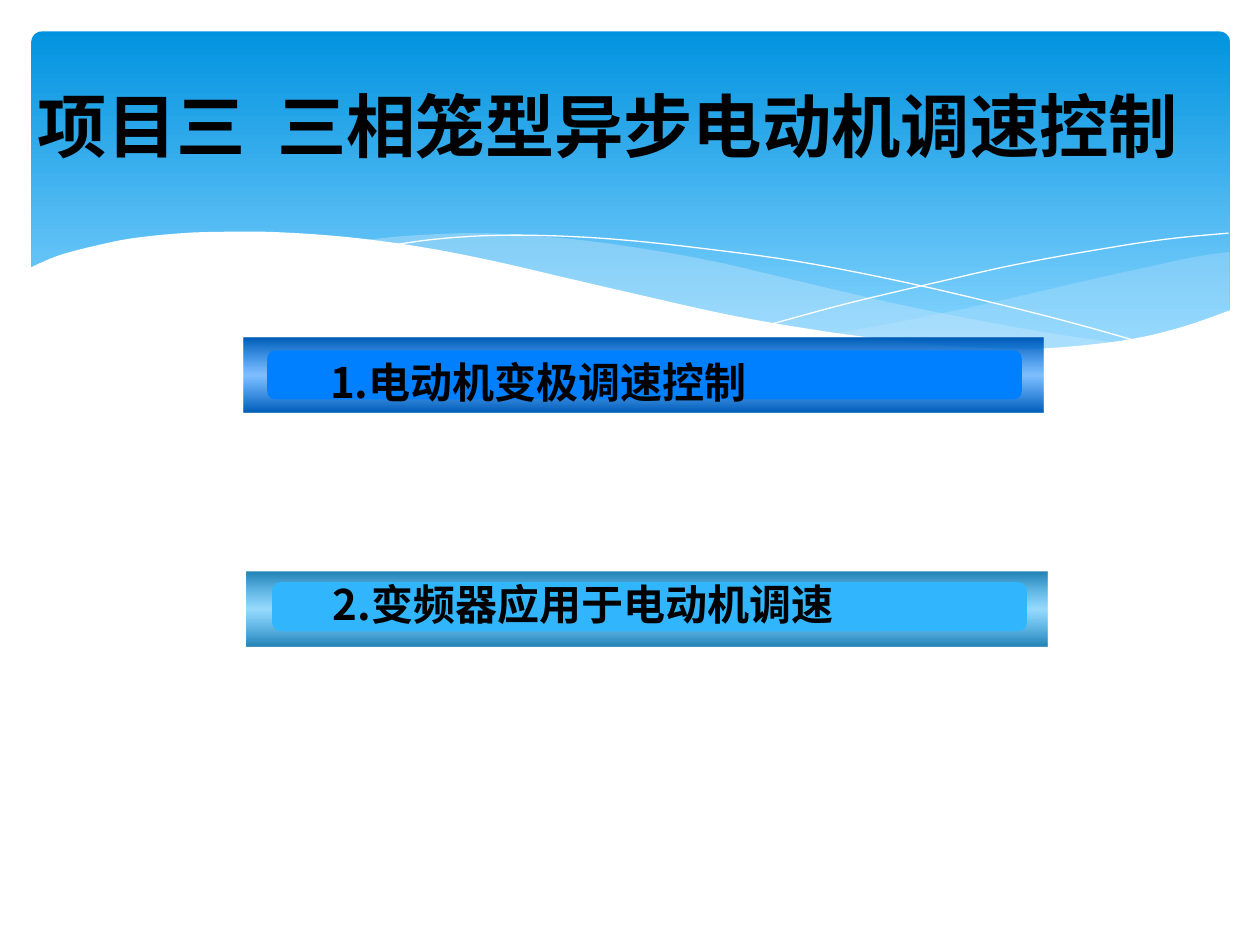
"""Build the opening slide of a project on motor speed control."""
from dataclasses import dataclass
from typing import Optional

from lxml.etree import SubElement
from pptx import Presentation
from pptx.dml.color import RGBColor
from pptx.enum.shapes import MSO_SHAPE
from pptx.enum.text import MSO_ANCHOR, MSO_AUTO_SIZE, PP_ALIGN
from pptx.oxml.ns import qn
from pptx.util import Inches, Pt

Point = tuple[float, float]
Stop = tuple[int, str, int]


@dataclass(frozen=True)
class Theme:
    sky_top: str = "0293E0"
    sky_bottom: str = "83D3FE"
    mist: str = "C6E7FC"
    white: str = "FFFFFF"
    text: str = "000000"
    title_font: str = "Calibri"
    latin_font: str = "Arial"
    chinese_font: str = "Noto Sans CJK SC"
    title_size: float = 39.6
    topic_size: float = 24


@dataclass(frozen=True)
class Wave:
    edges: tuple[tuple[Point, ...], ...]
    fill: Optional[str] = None
    opacity: int = 100


@dataclass(frozen=True)
class Topic:
    label: str
    color: str
    edge: str
    bar: Point
    plate: Point
    text: Point
    text_width: float


THEME = Theme()

WAVES = (
    Wave((
        ((9.76, 2), (9.48, 2.04), (9.06, 2.13), (8.61, 2.23), (7.79, 2.42), (7.06, 2.57), (6.61, 2.65)),
        ((6.61, 2.65), (7.19, 2.72), (7.69, 2.77), (8.14, 2.78), (8.63, 2.75), (9.05, 2.69), (9.42, 2.59),
         (9.76, 2.47)),
    ), THEME.mist, 29),
    Wave((
        ((8.93, 2.73), (8.37, 2.65), (7.75, 2.54), (7.06, 2.4), (6.29, 2.22), (5.69, 2.08), (5.14, 1.98),
         (4.65, 1.91), (4.2, 1.87), (3.8, 1.85), (3.44, 1.86), (3.13, 1.88), (2.86, 1.91)),
        ((2.86, 1.91), (3.42, 1.99), (4.04, 2.11), (4.49, 2.22), (5.3, 2.4), (6.01, 2.55), (6.65, 2.66),
         (7.22, 2.74), (7.73, 2.77), (8.18, 2.78), (8.57, 2.77), (8.93, 2.73)),
    ), THEME.mist, 40),
    Wave((
        ((3.09, 1.95), (3.44, 1.9), (3.87, 1.87), (4.33, 1.87), (4.89, 1.9), (5.56, 1.97), (6.36, 2.08),
         (7.27, 2.26), (8.31, 2.51), (9.07, 2.72)),
    )),
    Wave((
        ((6.13, 2.57), (6.72, 2.41), (7.48, 2.23), (8.06, 2.1), (8.66, 1.99), (9.24, 1.9), (9.75, 1.85)),
    )),
    Wave((
        ((9.77, 2.46), (9.4, 2.59), (8.99, 2.69), (8.5, 2.75), (8.09, 2.77), (7.61, 2.75), (7.08, 2.7),
         (6.48, 2.62), (5.79, 2.5), (5.03, 2.33), (4.47, 2.2), (3.91, 2.07), (3.4, 1.97), (2.92, 1.9),
         (2.5, 1.86), (2.11, 1.84), (1.77, 1.84), (1.46, 1.85), (1.06, 1.89), (0.76, 1.95), (0.46, 2.03),
         (0.23, 2.13)),
        ((0.23, 3.29), (9.77, 3.29)),
    ), THEME.white),
)

TOPICS = (
    Topic("2.变频器应用于电动机调速", "31B6FD", "2382B5", (1.96, 4.54), (2.16, 4.62), (2.45, 4.54), 4.49),
    Topic("1.电动机变极调速控制", "0080FF", "005CB6", (1.93, 2.68), (2.12, 2.78), (2.43, 2.78), 5.64),
)


def smooth(knots: tuple[Point, ...], steps: int = 5) -> list[Point]:
    """Return points on a Catmull-Rom curve through the knots."""
    if len(knots) < 3:
        return list(knots)
    padded = (knots[0], *knots, knots[-1])
    points = []
    for a, b, c, d in zip(padded, padded[1:], padded[2:], padded[3:]):
        for step in range(steps):
            t = step / steps
            points.append(tuple(
                (2 * q + (r - p) * t + (2 * p - 5 * q + 4 * r - s) * t ** 2
                 + (3 * q - p - 3 * r + s) * t ** 3) / 2
                for p, q, r, s in zip(a, b, c, d)))
    return points + [knots[-1]]


def set_opacity(color_element, opacity: int) -> None:
    """Add an alpha value to a colour element."""
    if opacity < 100:
        SubElement(color_element, qn("a:alpha"), val=str(opacity * 1000))


def fill_vertical(shape, stops: tuple[Stop, ...]) -> None:
    """Fill a shape with a gradient that runs from top to bottom."""
    shape.fill.gradient()
    shape.fill.gradient_angle = 270
    stop_list = next(shape._element.iter(qn("a:gsLst")))
    for old in list(stop_list):
        stop_list.remove(old)
    for position, color, opacity in stops:
        stop = SubElement(stop_list, qn("a:gs"), pos=str(position * 1000))
        set_opacity(SubElement(stop, qn("a:srgbClr"), val=color), opacity)


def fill_solid(shape, color: str, opacity: int = 100) -> None:
    """Fill a shape with one colour."""
    shape.fill.solid()
    shape.fill.fore_color.rgb = RGBColor.from_string(color)
    set_opacity(shape._element.spPr.find(qn("a:solidFill"))[0], opacity)


def add_panel(shapes, kind: MSO_SHAPE, at: Point, size: Point, corner: Optional[float] = None):
    """Add a preset shape without line or shadow."""
    panel = shapes.add_shape(kind, *map(Inches, (*at, *size)))
    panel.shadow.inherit = False
    panel.line.fill.background()
    if corner is not None:
        panel.adjustments[0] = corner
    return panel


def add_wave(shapes, wave: Wave) -> None:
    """Draw a wave as a filled area or as a white hairline."""
    start, *rest = [(Inches(x), Inches(y)) for edge in wave.edges for x, y in smooth(edge)]
    builder = shapes.build_freeform(*start)
    builder.add_line_segments(rest, close=wave.fill is not None)
    shape = builder.convert_to_shape()
    shape.shadow.inherit = False
    if wave.fill:
        fill_solid(shape, wave.fill, wave.opacity)
        shape.line.fill.background()
    else:
        shape.fill.background()
        shape.line.color.rgb = RGBColor.from_string(THEME.white)
        shape.line.width = Pt(0)


def add_span(para, text: str, font: str, size: float) -> None:
    """Add one bold run to a paragraph."""
    span = para.add_run()
    span.text = text
    span.font.name = font
    span.font.size = Pt(size)
    span.font.bold = True
    span.font.color.rgb = RGBColor.from_string(THEME.text)
    SubElement(span.font._element, qn("a:ea"), typeface=THEME.chinese_font)


def format_title(page, text: str) -> None:
    """Place the title above the header artwork and write its text."""
    title = page.shapes.title
    page.shapes._spTree.append(title._element)
    title.left, title.top, title.width, title.height = map(Inches, (0.2, 0.36, 9.61, 1.26))
    frame = title.text_frame
    frame.auto_size = MSO_AUTO_SIZE.NONE
    frame.vertical_anchor = MSO_ANCHOR.MIDDLE
    para = frame.paragraphs[0]
    para.alignment = PP_ALIGN.LEFT
    add_span(para, text, THEME.title_font, THEME.title_size)


def add_topic(page, topic: Topic) -> None:
    """Draw a topic as a group of bar, plate and label."""
    shapes = page.shapes.add_group_shape().shapes
    bar = add_panel(shapes, MSO_SHAPE.RECTANGLE, topic.bar, (6.35, 0.59))
    fill_vertical(bar, ((0, topic.edge, 100), (50, topic.color, 50), (100, topic.edge, 100)))
    plate = add_panel(shapes, MSO_SHAPE.ROUNDED_RECTANGLE, topic.plate, (5.99, 0.39), 0.17)
    fill_solid(plate, topic.color)
    box = shapes.add_textbox(*map(Inches, (*topic.text, topic.text_width, 0.5)))
    box.text_frame.word_wrap = True
    box.text_frame.auto_size = MSO_AUTO_SIZE.SHAPE_TO_FIT_TEXT
    para = box.text_frame.paragraphs[0]
    add_span(para, " ", THEME.latin_font, THEME.topic_size)
    add_span(para, topic.label, THEME.chinese_font, THEME.topic_size)


def main() -> None:
    """Build and save the deck."""
    deck = Presentation()
    deck.slide_width, deck.slide_height = Inches(10), Inches(7.5)
    page = deck.slides.add_slide(deck.slide_layouts[5])
    sky = add_panel(page.shapes, MSO_SHAPE.ROUNDED_RECTANGLE, (0.25, 0.25), (9.51, 2.7), 0.03)
    fill_vertical(sky, ((0, THEME.sky_top, 100), (90, THEME.sky_bottom, 100)))
    for wave in WAVES:
        add_wave(page.shapes, wave)
    format_title(page, "项目三  三相笼型异步电动机调速控制")
    for topic in TOPICS:
        add_topic(page, topic)
    deck.save("out.pptx")


if __name__ == "__main__":
    main()
